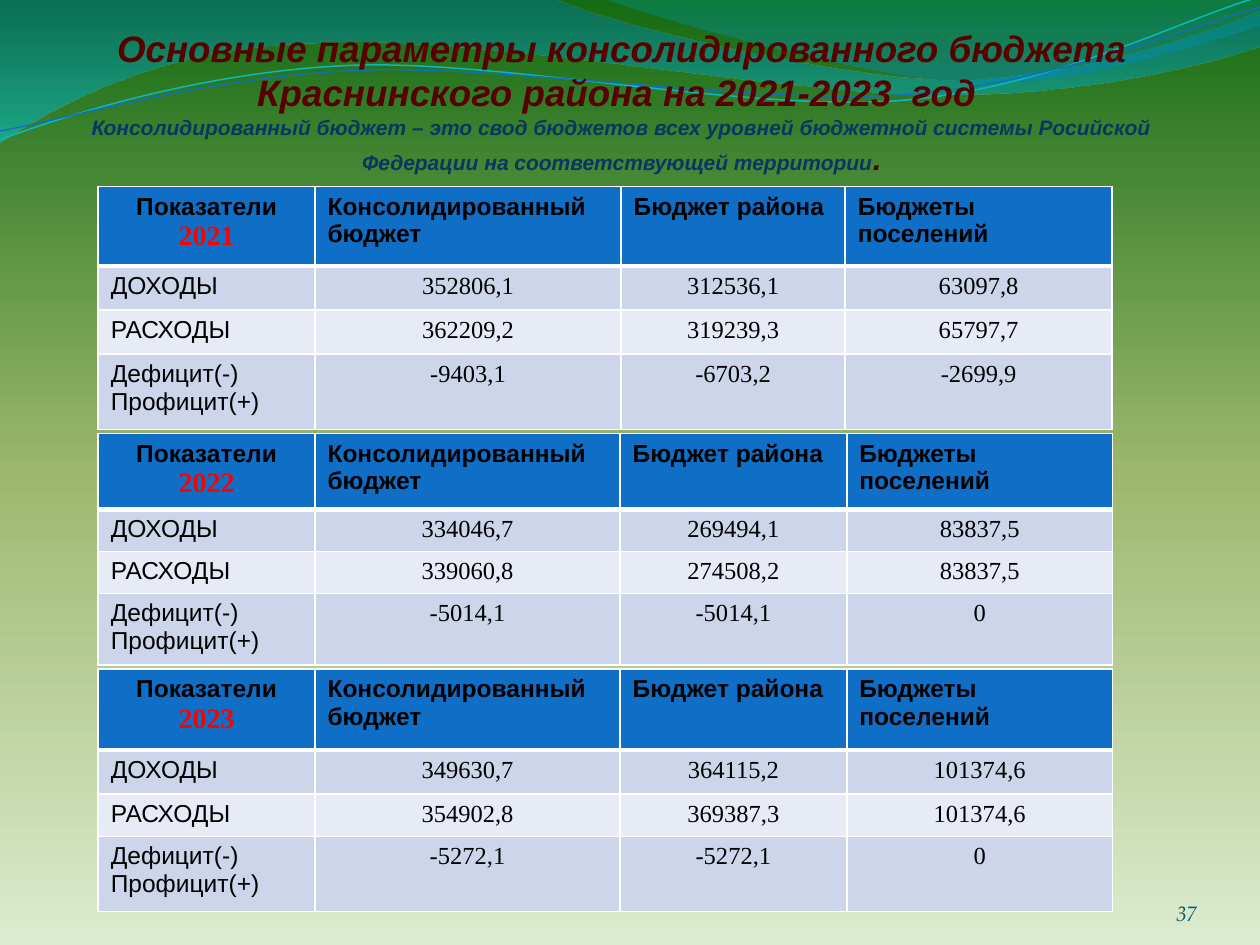
from dataclasses import dataclass

from lxml import etree
from pptx import Presentation
from pptx.dml.color import RGBColor
from pptx.enum.text import MSO_ANCHOR, PP_ALIGN
from pptx.oxml import parse_xml
from pptx.oxml.ns import nsdecls, qn
from pptx.util import Cm, Pt

LEFT, CENTER, RIGHT = PP_ALIGN.LEFT, PP_ALIGN.CENTER, PP_ALIGN.RIGHT
BOTTOM = MSO_ANCHOR.BOTTOM


@dataclass(frozen=True)
class Theme:
    sans: str = "Arial"
    serif: str = "Times New Roman"
    number_font: str = "TeX Gyre Pagella"
    title: str = "580000"
    definition: str = "083763"
    number: str = "045D75"
    ink: str = "000000"
    year: str = "FF0000"
    border: str = "FFFFFF"
    header: str = "0F6FC6"
    bands: tuple = ("CCD5EA", "E7EBF5")
    title_size: float = 21
    definition_size: float = 12
    stop_size: float = 18
    year_size: float = 16
    table_size: float = 14
    number_size: float = 12


THEME = Theme()

TITLE = [
    "Основные параметры консолидированного бюджета",
    "Краснинского района на 2021-2023  год ",
]
DEFINITION = (
    "Консолидированный бюджет – это свод бюджетов всех уровней бюджетной системы "
    "Росийской Федерации на соответствующей территории"
)
PAGE_NUMBER = "37"
BUDGETS = ["Консолидированный  бюджет", "Бюджет района", "Бюджеты поселений"]
INDICATORS = ["ДОХОДЫ", "РАСХОДЫ", "Дефицит(-)\nПрофицит(+)"]
YEARS = [
    {
        "year": "2021", "top": 3.76, "height": 4.9,
        "columns": [4.37, 6.17, 4.52, 5.38], "rows": [1.6, 0.89, 0.89, 1.52],
        "values": [
            ["352806,1", "312536,1", "63097,8"],
            ["362209,2", "319239,3", "65797,7"],
            ["-9403,1", "-6703,2", "-2699,9"],
        ],
    },
    {
        "year": "2022", "top": 8.74, "height": 4.65,
        "columns": [4.37, 6.15, 4.57, 5.36], "rows": [1.4, 0.64, 0.81, 1.02],
        "values": [
            ["334046,7", "269494,1", "83837,5"],
            ["339060,8", "274508,2", "83837,5"],
            ["-5014,1", "-5014,1", "0"],
        ],
    },
    {
        "year": "2023", "top": 13.49, "height": 4.88,
        "columns": [4.37, 6.15, 4.57, 5.36], "rows": [1.63, 0.89, 0.46, 1.52],
        "values": [
            ["349630,7", "364115,2", "101374,6"],
            ["354902,8", "369387,3", "101374,6"],
            ["-5272,1", "-5272,1", "0"],
        ],
    },
]
TABLE_LEFT = 1.98

BACKDROP = {"stops": [(0, "DDEBCF", 100), (50, "9CB86E", 100), (100, "156B13", 100)], "angle": 270}
WAVES = [
    {
        "outline": [
            (0, -0.03), (11.18, -0.03),
            (12.09, 0.43, 16.87, 1.6, 19.25, 1.6), (21.67, 1.6, 24.33, 0.66, 25.4, 0.23),
            (25.43, 0.91),
            (24.97, 1.12, 22.1, 1.93, 18.95, 1.91), (15.8, 1.91, 9.7, 0.71, 6.53, 0.86),
            (3.28, 0.89, 1.17, 2.11, -0.03, 2.87),
        ],
        "stops": [(0, "0074A1", 45), (100, "00C6CF", 55)],
    },
    {
        "outline": [
            (12.17, -0.03),
            (12.93, 0.28, 17.32, 1.57, 19.53, 1.65), (21.74, 1.75, 24.41, 0.81, 25.4, 0.53),
            (25.4, 0),
        ],
        "stops": [(0, "00A1A9", 30), (80, "008BBF", 45)],
    },
    {
        "outline": [
            (0, 2.82),
            (1.22, 2.36, 4.01, 1.45, 7.04, 1.32), (10.03, 1.19, 15.06, 2.26, 18.11, 2.03),
            (21.16, 1.8, 23.83, 0.38, 25.35, -0.05),
        ],
        "line": ("0AB8BF", 0.85),
    },
    {
        "outline": [
            (0, 2.64),
            (1.19, 2.44, 4.17, 1.55, 7.19, 1.42), (10.24, 1.3, 15.16, 2.11, 18.21, 1.91),
            (21.23, 1.7, 23.9, 0.53, 25.4, 0.15),
        ],
        "line": ("0F6FC6", 0.75),
    },
]


def set_gradient(fill, properties, stops, angle):
    fill.solid()
    marks = "".join(
        f'<a:gs pos="{place * 1000}"><a:srgbClr val="{color}">'
        f'<a:alpha val="{opacity * 1000}"/></a:srgbClr></a:gs>'
        for place, color, opacity in stops
    )
    gradient = parse_xml(
        f'<a:gradFill {nsdecls("a")} rotWithShape="1"><a:gsLst>{marks}</a:gsLst>'
        f'<a:lin ang="{angle * 60000}" scaled="0"/></a:gradFill>'
    )
    properties.replace(properties.find(qn("a:solidFill")), gradient)


def bend(shape, segments):
    steps = iter(list(shape._element.iter(qn("a:lnTo"))))
    for segment in segments:
        first = next(steps)
        if len(segment) == 6:
            curve = etree.Element(qn("a:cubicBezTo"))
            first.addprevious(curve)
            for step in (first, next(steps), next(steps)):
                curve.append(step[0])
                step.getparent().remove(step)


def add_wave(slide, wave):
    start, *segments = wave["outline"]
    knots = [
        (Cm(segment[i]), Cm(segment[i + 1]))
        for segment in segments for i in range(0, len(segment), 2)
    ]
    builder = slide.shapes.build_freeform(Cm(start[0]), Cm(start[1]))
    builder.add_line_segments(knots, close="stops" in wave)
    shape = builder.convert_to_shape()
    bend(shape, segments)
    shape.shadow.inherit = False
    if "stops" in wave:
        set_gradient(shape.fill, shape._element.spPr, wave["stops"], 90)
        shape.line.fill.background()
    else:
        color, width = wave["line"]
        shape.fill.background()
        shape.line.color.rgb = RGBColor.from_string(color)
        shape.line.width = Pt(width)


def style(paragraph, font, size, color, align, bold=False, italic=False):
    paragraph.alignment = align
    for run in paragraph.runs:
        run.font.name, run.font.size = font, Pt(size)
        run.font.color.rgb = RGBColor.from_string(color)
        run.font.bold, run.font.italic = bold, italic


def add_text(slide, text, left, top, width, height, inset=0):
    frame = slide.shapes.add_textbox(Cm(left), Cm(top), Cm(width), Cm(height)).text_frame
    frame.word_wrap = True
    frame.vertical_anchor = BOTTOM
    frame.margin_left = frame.margin_right = frame.margin_bottom = 0
    frame.margin_top = Cm(inset)
    frame.text = text
    return frame


def add_title(slide):
    frame = add_text(slide, "\n".join([*TITLE, DEFINITION]), 1.59, 0, 21.89, 3.57, 0.13)
    *headings, definition = frame.paragraphs
    for heading in headings:
        style(heading, THEME.sans, THEME.title_size, THEME.title, CENTER, True, True)
    definition.add_run().text = "."
    style(definition, THEME.sans, THEME.definition_size, THEME.definition, CENTER, True, True)
    stop = definition.runs[-1].font
    stop.size = Pt(THEME.stop_size)
    stop.color.rgb = RGBColor.from_string(THEME.title)


def set_borders(cell, row):
    widths = {"L": 1, "R": 1, "T": 3 if row == 1 else 1, "B": 3 if row == 0 else 1}
    for place, (side, width) in enumerate(widths.items()):
        cell._tc.get_or_add_tcPr().insert(place, parse_xml(
            f'<a:ln{side} {nsdecls("a")} w="{Pt(width)}"><a:solidFill>'
            f'<a:srgbClr val="{THEME.border}"/></a:solidFill></a:ln{side}>'
        ))


def add_budget_table(slide, budget):
    columns, rows, height = budget["columns"], budget["rows"], Cm(budget["height"])
    holder = slide.shapes.add_table(
        len(rows), len(columns), Cm(TABLE_LEFT), Cm(budget["top"]), Cm(sum(columns)), height
    )
    table = holder.table
    for column, width in zip(table.columns, columns):
        column.width = Cm(width)
    for row, row_height in zip(table.rows, rows):
        row.height = Cm(row_height)
    holder.height = height
    content = [[f"Показатели\n{budget['year']}", *BUDGETS]]
    content += [[name, *values] for name, values in zip(INDICATORS, budget["values"])]
    for r, entries in enumerate(content):
        for c, entry in enumerate(entries):
            cell = table.cell(r, c)
            cell.text_frame.text = entry
            cell.fill.solid()
            cell.fill.fore_color.rgb = RGBColor.from_string(THEME.bands[(r - 1) % 2] if r else THEME.header)
            set_borders(cell, r)
            font = THEME.serif if r and c else THEME.sans
            align = CENTER if bool(r) == bool(c) else LEFT
            if r == 0 and c:
                align = LEFT
            for paragraph in cell.text_frame.paragraphs:
                style(paragraph, font, THEME.table_size, THEME.ink, align, r == 0)
    year = table.cell(0, 0).text_frame.paragraphs[1]
    style(year, THEME.serif, THEME.year_size, THEME.year, CENTER, True)


def main():
    """Build the consolidated budget slide."""
    deck = Presentation()
    deck.slide_width, deck.slide_height = Cm(25.4), Cm(19.05)
    slide = deck.slides.add_slide(deck.slide_layouts[6])
    fill = slide.background.fill
    set_gradient(fill, slide._element.cSld.bg.bgPr, **BACKDROP)
    for wave in WAVES:
        add_wave(slide, wave)
    add_title(slide)
    for budget in YEARS:
        add_budget_table(slide, budget)
    number = add_text(slide, PAGE_NUMBER, 22.02, 17.65, 2.11, 1.02)
    style(number.paragraphs[0], THEME.number_font, THEME.number_size, THEME.number, RIGHT, italic=True)
    deck.save("out.pptx")


if __name__ == "__main__":
    main()
